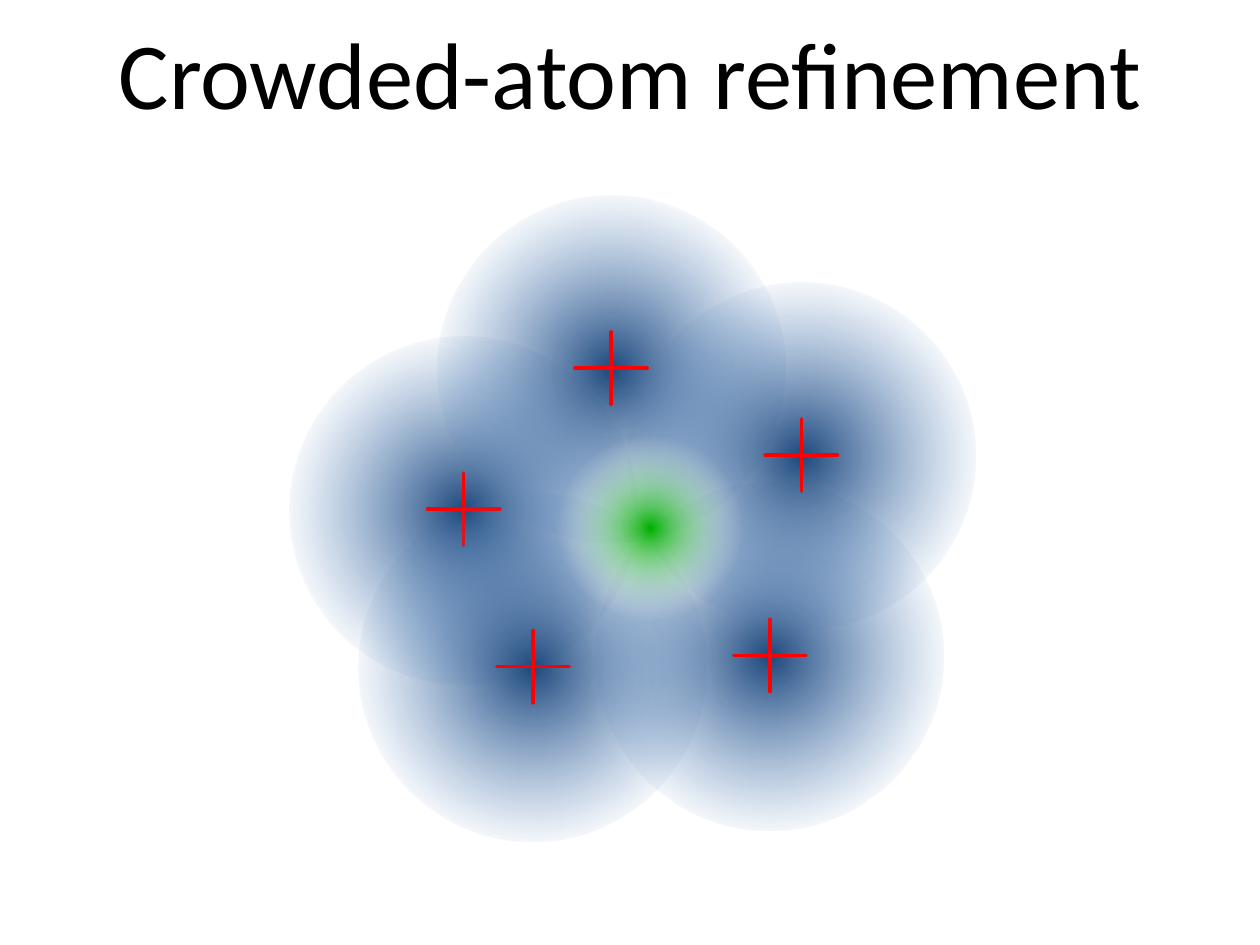
from lxml import etree
from pptx import Presentation
from pptx.dml.color import RGBColor
from pptx.enum.shapes import MSO_SHAPE
from pptx.enum.text import MSO_ANCHOR, PP_ALIGN
from pptx.oxml import parse_xml
from pptx.oxml.ns import qn
from pptx.util import Pt

ELLIPSE = MSO_SHAPE.OVAL
PLUS = MSO_SHAPE.MATH_PLUS
MIDDLE = MSO_ANCHOR.MIDDLE
CENTER = PP_ALIGN.CENTER
DRAWING_NS = "http://schemas.openxmlformats.org/drawingml/2006/main"

ATOM_SIZE = 198.72
CROSS_SIZE = 56.16
CROSS_RISE = 0.6  # the crosses sit slightly above the atom centres
GHOST_SIZE = 141.12
ATOM_CENTERS = [
    (264.96, 291.6),
    (349.2, 210.96),
    (304.56, 381.6),
    (439.92, 375.12),
    (457.92, 260.64),
]
GHOST_CENTER = (371.52, 301.68)


def color(hex_value):
    return RGBColor.from_string(hex_value)


def write_text(frame, text, *, size, font, fill, align, anchor):
    frame.word_wrap = True
    frame.vertical_anchor = anchor
    paragraph = frame.paragraphs[0]
    paragraph.alignment = align
    run = paragraph.add_run()
    run.text = text
    run.font.size = Pt(size)
    run.font.name = font
    run.font.color.rgb = color(fill)


def add_centered(shapes, kind, center, size):
    x, y = center
    shape = shapes.add_shape(
        kind, Pt(x - size / 2), Pt(y - size / 2), Pt(size), Pt(size))
    shape.shadow.inherit = False
    return shape


def add_cloud(shapes, center, size, core, edge, fade_end):
    """Draw a disc fading radially from core to a fully transparent edge."""
    cloud = add_centered(shapes, ELLIPSE, center, size)
    cloud.line.fill.background()
    cloud.fill.background()
    gradient = parse_xml(
        f'<a:gradFill xmlns:a="{DRAWING_NS}" rotWithShape="1"><a:gsLst>'
        f'<a:gs pos="0"><a:srgbClr val="{core}"/></a:gs>'
        f'<a:gs pos="{fade_end * 1000}"><a:srgbClr val="{edge}">'
        '<a:alpha val="0"/></a:srgbClr></a:gs></a:gsLst>'
        '<a:path path="circle">'
        '<a:fillToRect l="50000" t="50000" r="50000" b="50000"/>'
        '</a:path></a:gradFill>')
    properties = cloud.element.spPr
    properties.replace(properties.find(qn("a:noFill")), gradient)
    etree.cleanup_namespaces(gradient)


def add_atom(slide, center):
    """Group an atom's density cloud with the cross at its position."""
    atom = slide.shapes.add_group_shape()
    add_cloud(atom.shapes, center, ATOM_SIZE, "1F497D", "4F81BD", 75)
    x, y = center
    cross = add_centered(atom.shapes, PLUS, (x, y - CROSS_RISE), CROSS_SIZE)
    cross.adjustments[0] = 0
    cross.fill.solid()
    cross.fill.fore_color.rgb = color("4F81BD")
    cross.line.color.rgb = color("FF0000")
    cross.line.width = Pt(2)


def add_title(slide, left, top, width, height):
    title = slide.shapes.add_textbox(Pt(left), Pt(top), Pt(width), Pt(height))
    write_text(title.text_frame, "Crowded-atom refinement", size=54,
               font="Calibri", fill="000000", align=CENTER, anchor=MIDDLE)


def main():
    deck = Presentation()
    deck.slide_width, deck.slide_height = Pt(720), Pt(540)
    slide = deck.slides.add_slide(deck.slide_layouts[6])

    # Ring of crowded atoms
    for center in ATOM_CENTERS:
        add_atom(slide, center)

    # Green peak between the atoms
    add_cloud(slide.shapes, GHOST_CENTER, GHOST_SIZE, "00B000", "FFFFFF", 53)

    # Title
    add_title(slide, 54, -2.16, 612, 85.68)

    deck.save("out.pptx")


if __name__ == "__main__":
    main()
